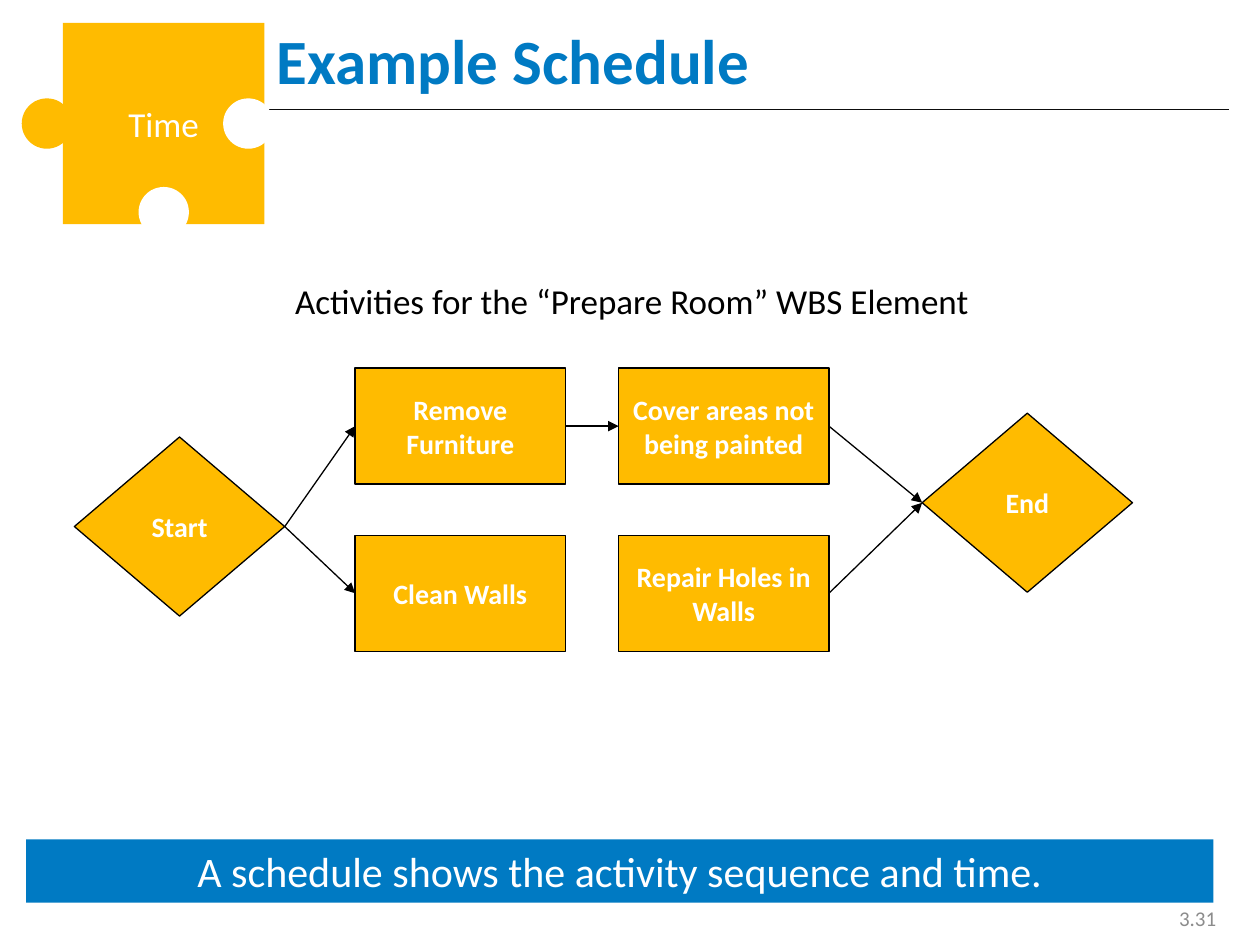
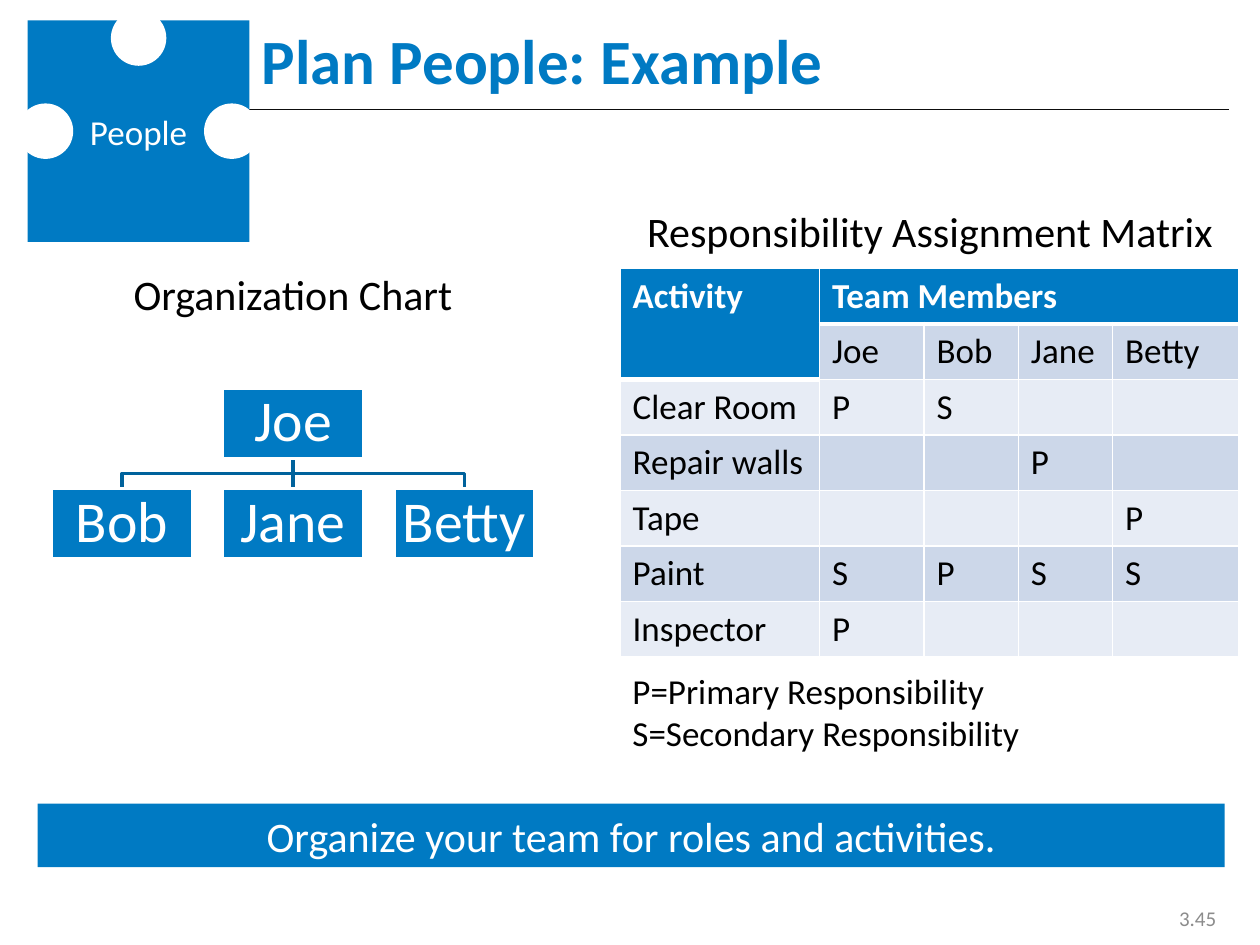
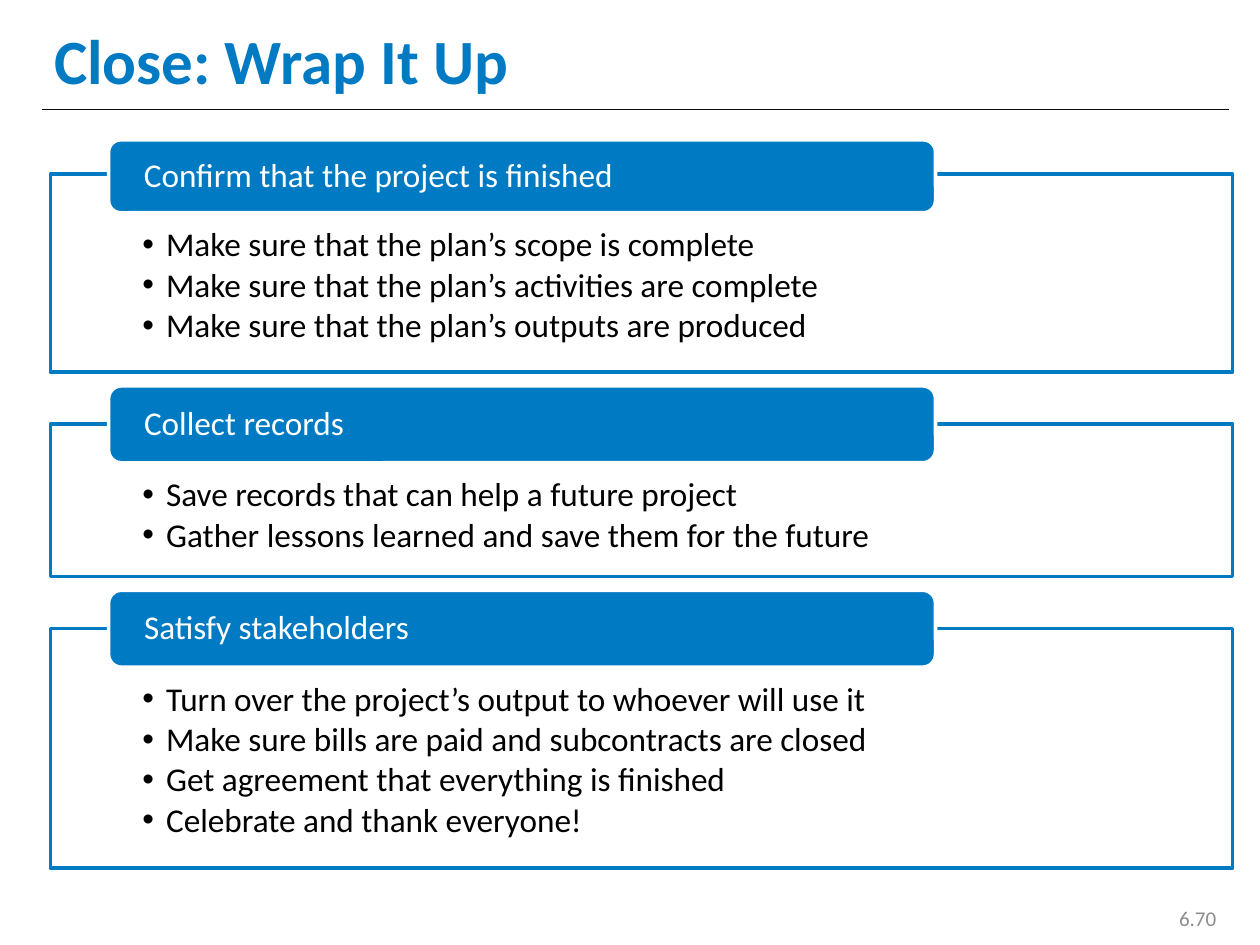
from pptx import Presentation
from pptx.dml.color import RGBColor
from pptx.enum.shapes import MSO_CONNECTOR as Link, MSO_SHAPE as Preset
from pptx.enum.text import MSO_ANCHOR as Anchor, MSO_AUTO_SIZE as AutoSize, PP_ALIGN as Align
from pptx.oxml.ns import qn
from pptx.util import Cm, Pt
from lxml.etree import SubElement

BLUE, AMBER, WHITE, BLACK = "007AC3", "FFBB00", "FFFFFF", "000000"
RULE, GREY, BRANCH = "0D0D0D", "8C8C8C", "00629C"
BANDS = ["E7ECF5", "CCD7E9"]
FONT = "Calibri"
LEFT_EDGE, RIGHT_EDGE = 0.84, 24.77

MEMBERS = ["Joe", "Bob", "Jane", "Betty"]
ASSIGNMENTS = [
    ["Activity", "Team Members", "", "", ""],
    [""] + MEMBERS,
    ["Clear Room", "P", "S", "", ""],
    ["Repair walls", "", "", "P", ""],
    ["Tape", "", "", "", "P"],
    ["Paint", "S", "P", "S", "S"],
    ["Inspector", "P", "", "", ""],
]
CLOSING_STEPS = [
    ("Confirm that the project is finished", 1.47, 3.99, [
        "Make sure that the plan’s scope is complete",
        "Make sure that the plan’s activities are complete",
        "Make sure that the plan’s outputs are produced"]),
    ("Collect records", 1.55, 3.07, [
        "Save records that can help a future project",
        "Gather lessons learned and save them for the future"]),
    ("Satisfy stakeholders", 1.55, 4.83, [
        "Turn over the project’s output to whoever will use it",
        "Make sure bills are paid and subcontracts are closed",
        "Get agreement that everything is finished",
        "Celebrate and thank everyone!"]),
]


def rgb(code):
    return RGBColor.from_string(code)


def lengths(box):
    return [Cm(value) for value in box]


def paint(shape, fill, line=None, weight=0.75):
    shape.shadow.inherit = False
    shape.fill.solid()
    shape.fill.fore_color.rgb = rgb(fill)
    if line:
        shape.line.color.rgb = rgb(line)
        shape.line.width = Pt(weight)
    else:
        shape.line.fill.background()


def style(paragraph, size, color, bold=False, align=Align.LEFT):
    paragraph.alignment = align
    font = paragraph.font
    font.name, font.size, font.bold = FONT, Pt(size), bold
    font.color.rgb = rgb(color)


def write(frame, lines, size, color, bold=False, align=Align.LEFT,
          anchor=Anchor.MIDDLE, spacing=1.0, margins=(0.25, 0.13, 0.25, 0.13)):
    frame.text = "\n".join(lines)
    frame.word_wrap = True
    frame.auto_size = AutoSize.NONE
    frame.vertical_anchor = anchor
    (frame.margin_left, frame.margin_top,
     frame.margin_right, frame.margin_bottom) = lengths(margins)
    for paragraph in frame.paragraphs:
        paragraph.line_spacing = spacing
        style(paragraph, size, color, bold, align)


def place(shape, box):
    shape.left, shape.top, shape.width, shape.height = lengths(box)


def add_block(slide, preset, box, fill, line=None, weight=0.75):
    block = slide.shapes.add_shape(preset, *lengths(box))
    paint(block, fill, line, weight)
    return block


def add_caption(slide, box, lines, size, align=Align.CENTER, color=BLACK, anchor=Anchor.TOP):
    caption = slide.shapes.add_textbox(*lengths(box))
    write(caption.text_frame, lines, size, color, align=align, anchor=anchor)


def add_line(slide, color, start=(0, 0), end=(0, 0), joins=None, arrow=False):
    line = slide.shapes.add_connector(Link.STRAIGHT, *lengths(start + end))
    if joins:
        line.begin_connect(joins[0], 3)
        line.end_connect(joins[1], 1)
    line.line.color.rgb = rgb(color)
    line.line.width = Pt(0.75)
    properties = line._element.spPr
    if arrow:
        SubElement(properties.find(qn("a:ln")), qn("a:tailEnd"), type="triangle")
    SubElement(properties, qn("a:effectLst"))


def start_slide(deck, layout, title, number, title_left=LEFT_EDGE):
    slide = deck.slides.add_slide(deck.slide_layouts[layout])
    heading = slide.shapes.title
    place(heading, (title_left, 0.2, RIGHT_EDGE - title_left, 1.98))
    write(heading.text_frame, [title], 36, BLUE, bold=True)
    add_line(slide, RULE, (LEFT_EDGE, 2.21), (RIGHT_EDGE, 2.21))
    add_caption(slide, (18.85, 18.16, 5.92, 0.69), [number], 12,
                Align.RIGHT, GREY, Anchor.MIDDLE)
    return slide


def add_banner(slide, left, top, message):
    banner = add_block(slide, Preset.RECTANGLE, (left, top, 23.93, 1.28), BLUE)
    write(banner.text_frame, [message], 24, WHITE, align=Align.CENTER)


def add_puzzle_piece(slide, left, top, side, label, fill, knobs):
    piece = add_block(slide, Preset.RECTANGLE, (left, top, side, side), fill)
    write(piece.text_frame, [label], 20, WHITE, align=Align.CENTER)
    knob = side / 4
    for across, down, color in knobs:
        add_block(slide, Preset.OVAL, (left + across * side - knob / 2,
                  top + down * side - knob / 2, knob, knob), color)


def add_flow(slide, left, top):
    def add_step(preset, x, y, height, label):
        step = add_block(slide, preset, (left + x, top + y, 4.24, height), AMBER, BLACK)
        write(step.text_frame, [label], 16, WHITE, bold=True, align=Align.CENTER)
        return step

    def add_task(column, row, label):
        return add_step(Preset.FLOWCHART_PROCESS, 5.66 + 5.31 * column, 3.37 * row, 2.34, label)

    start = add_step(Preset.FLOWCHART_DECISION, 0, 1.39, 3.61, "Start")
    remove = add_task(0, 0, "Remove Furniture")
    clean = add_task(0, 1, "Clean Walls")
    repair = add_task(1, 1, "Repair Holes in Walls")
    cover = add_task(1, 0, "Cover areas not being painted")
    end = add_step(Preset.FLOWCHART_DECISION, 17.09, 0.91, 3.61, "End")
    for joins in [(start, remove), (start, clean), (remove, cover), (cover, end), (repair, end)]:
        add_line(slide, BLACK, joins=joins, arrow=True)


def add_org_chart(slide, left, top):
    width, height, pitch, drop = 2.84, 1.42, 3.45, 2.03
    first, middle, last = [left + width / 2 + pitch * i for i in range(3)]
    parent_foot, report_top = top + height, top + drop
    bar = (parent_foot + report_top) / 2
    outline = slide.shapes.build_freeform(Cm(first), Cm(report_top))
    outline.add_line_segments(
        [lengths(point) for point in [(first, bar), (last, bar), (last, report_top)]], close=False)
    outline.move_to(Cm(middle), Cm(parent_foot))
    outline.add_line_segments([lengths((middle, report_top))], close=False)
    branches = outline.convert_to_shape()
    paint(branches, WHITE, BRANCH, 2)
    branches.fill.background()
    for name, column, level in zip(MEMBERS, [1, 0, 1, 2], [0, 1, 1, 1]):
        person = add_block(slide, Preset.RECTANGLE,
                           (left + pitch * column, top + drop * level, width, height),
                           BLUE, WHITE, 2)
        write(person.text_frame, [name], 33, WHITE, align=Align.CENTER,
              spacing=0.9, margins=[0.05] * 4)


def add_border(cell, side, weight):
    edge = SubElement(cell._tc.get_or_add_tcPr(), qn("a:" + side), w=str(Pt(weight)))
    SubElement(SubElement(edge, qn("a:solidFill")), qn("a:srgbClr"), val=WHITE)


def is_header(row, column):
    return row == 0 or (row == 1 and column == 0)


def add_matrix(slide, left, top):
    widths = [4.02, 2.11, 1.9, 1.9, 2.55]
    row_height = 1.1
    box = (left, top, sum(widths), row_height * len(ASSIGNMENTS))
    matrix = slide.shapes.add_table(len(ASSIGNMENTS), len(widths), *lengths(box)).table
    for column, width in zip(matrix.columns, widths):
        column.width = Cm(width)
    for r, entries in enumerate(ASSIGNMENTS):
        for c, entry in enumerate(entries):
            cell, header = matrix.cell(r, c), is_header(r, c)
            add_border(cell, "lnL", 1)
            add_border(cell, "lnR", 1)
            add_border(cell, "lnT", 3 if r and is_header(r - 1, c) else 1)
            add_border(cell, "lnB", 3 if header else 1)
            cell.fill.solid()
            cell.fill.fore_color.rgb = rgb(BLUE if header else BANDS[r % 2])
            cell.text = entry
            style(cell.text_frame.paragraphs[0], 20, WHITE if header else BLACK, header)
    matrix.cell(0, 0).merge(matrix.cell(1, 0))
    matrix.cell(0, 1).merge(matrix.cell(0, 4))


def fill_panel(panel, box, points):
    place(panel, box)
    paint(panel, WHITE, BLUE, 2)
    frame = panel.text_frame
    frame.text = "\n".join(points)
    for paragraph in frame.paragraphs:
        paragraph.level = 1
        properties = paragraph._p.get_or_add_pPr()
        properties.set("marL", str(Cm(0.48)))
        properties.set("indent", str(-Cm(0.48)))
        SubElement(properties, qn("a:buFont"), typeface="Arial")
        SubElement(properties, qn("a:buChar"), char="•")
        paragraph.space_before = Pt(0)
        paragraph.space_after = Pt(2.5)
        paragraph.line_spacing = 0.9
        style(paragraph, 19, BLACK)
    frame.auto_size = AutoSize.NONE
    frame.vertical_anchor = Anchor.TOP
    (frame.margin_left, frame.margin_top,
     frame.margin_right, frame.margin_bottom) = lengths((1.85, 1.09, 1.85, 0.38))


def add_closing_steps(slide, left, top, width):
    overlap, gap = 0.78, 0.28
    bodies = [holder for holder in slide.placeholders if holder.placeholder_format.idx > 0]
    for panel, (heading, tab_height, panel_height, points) in zip(bodies, CLOSING_STEPS):
        panel_top = top + tab_height - overlap
        fill_panel(panel, (left, panel_top, width, panel_height), points)
        tab = add_block(slide, Preset.ROUNDED_RECTANGLE,
                        (left + 1.17, top, 16.67, tab_height), BLUE, WHITE, 2)
        write(tab.text_frame, [heading], 19, WHITE, spacing=0.9, margins=(0.64, 0, 0.64, 0))
        top = panel_top + panel_height + gap
    for spare in bodies[len(CLOSING_STEPS):]:
        spare._element.getparent().remove(spare._element)


def build_schedule(deck):
    slide = start_slide(deck, 5, "Example Schedule", "3.31", 5.33)
    add_banner(slide, 0.53, 16.92, "A schedule shows the activity sequence and time.")
    add_puzzle_piece(slide, 1.27, 0.46, 4.06, "Time", AMBER,
                     [(-0.08, 0.5, AMBER), (0.5, 0.94, WHITE), (0.92, 0.5, WHITE)])
    add_caption(slide, (3.81, 5.51, 17.86, 1.12),
                ["Activities for the “Prepare Room” WBS Element"], 20)
    add_flow(slide, 1.5, 7.42)


def build_people(deck):
    slide = start_slide(deck, 5, "Plan People: Example", "3.45", 5.03)
    add_banner(slide, 0.76, 16.2, "Organize your team for roles and activities.")
    add_puzzle_piece(slide, 0.56, 0.41, 4.47, "People", BLUE,
                     [(0.5, 0.08, WHITE), (0.92, 0.5, WHITE), (0.08, 0.5, WHITE)])
    add_caption(slide, (1.04, 5.28, 9.73, 1.27), ["Organization Chart"], 24)
    add_org_chart(slide, 1.04, 7.82)
    add_caption(slide, (12.5, 4.01, 12.5, 1.27), ["Responsibility Assignment Matrix"], 24)
    add_matrix(slide, 12.5, 5.41)
    add_caption(slide, (12.5, 13.36, 8.99, 1.96),
                ["P=Primary Responsibility", "S=Secondary Responsibility"], 20, Align.LEFT)


def build_closing(deck):
    slide = start_slide(deck, 4, "Close: Wrap It Up", "6.70")
    add_closing_steps(slide, 1.02, 2.82, 23.83)


def main():
    deck = Presentation()
    deck.slide_width, deck.slide_height = Cm(25.4), Cm(19.05)
    build_schedule(deck)
    build_people(deck)
    build_closing(deck)
    deck.save("out.pptx")


if __name__ == "__main__":
    main()
